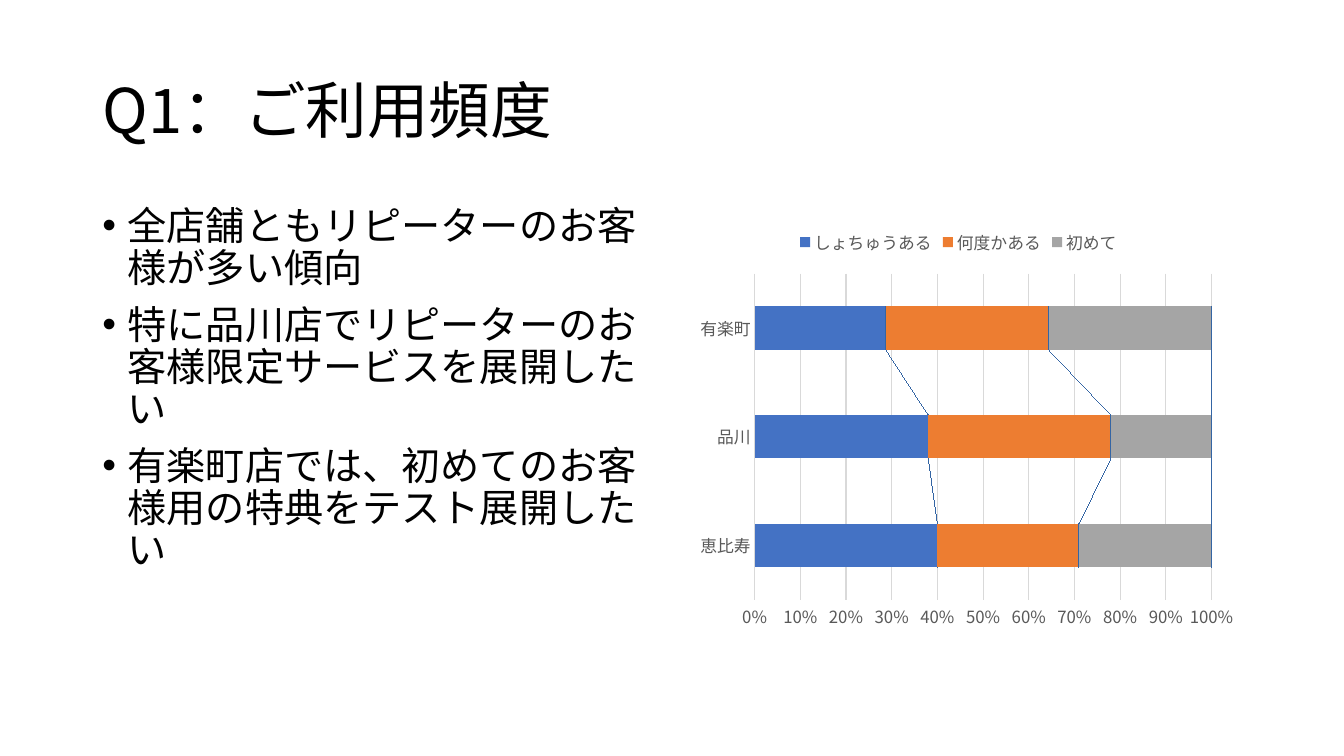
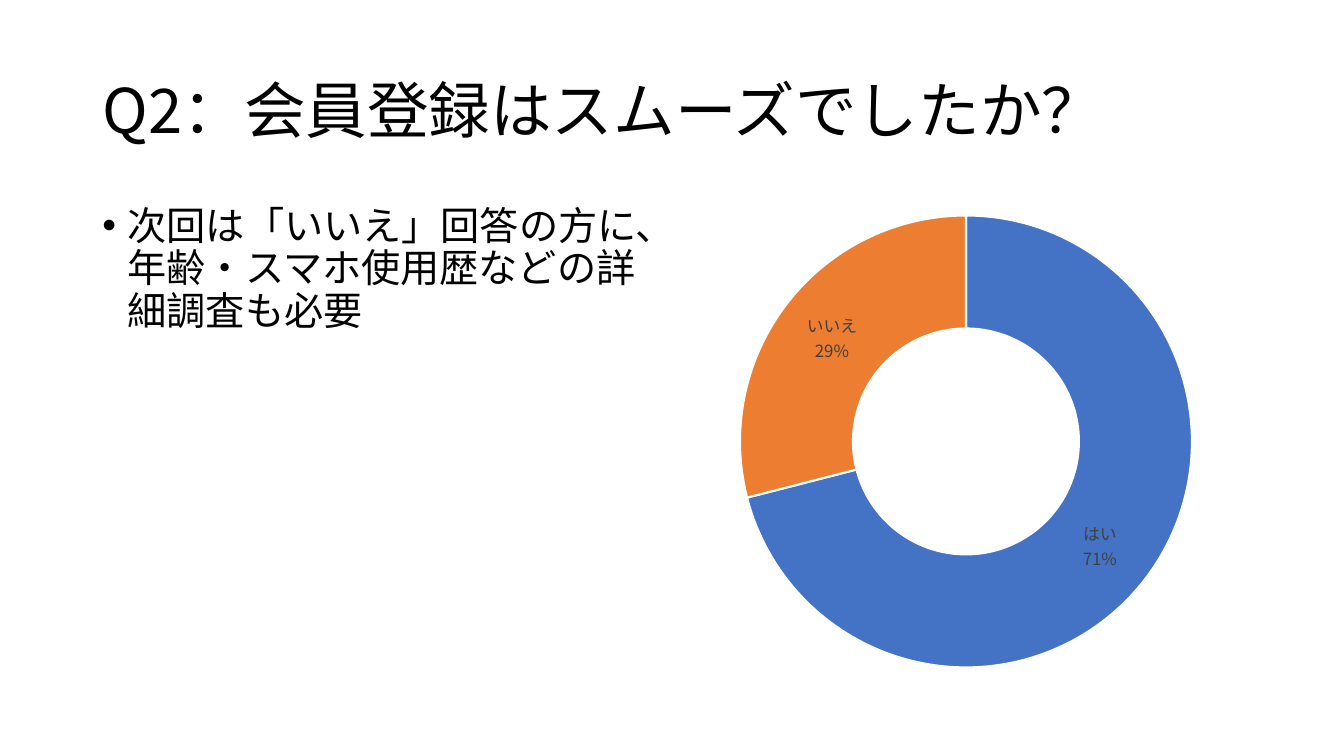
from lxml.etree import SubElement
from pptx import Presentation
from pptx.chart.data import CategoryChartData
from pptx.dml.color import RGBColor
from pptx.enum.chart import XL_CHART_TYPE, XL_LEGEND_POSITION, XL_TICK_MARK
from pptx.enum.text import MSO_ANCHOR, MSO_AUTO_SIZE
from pptx.oxml.ns import qn
from pptx.util import Pt

FONT = "Noto Sans CJK JP"
BLACK = RGBColor(0x00, 0x00, 0x00)
WHITE = RGBColor(0xFF, 0xFF, 0xFF)
AXIS_TEXT = RGBColor(0x59, 0x59, 0x59)
LABEL_TEXT = RGBColor(0x40, 0x40, 0x40)
GRID = RGBColor(0xD9, 0xD9, 0xD9)
PALETTE = (
    RGBColor(0x44, 0x72, 0xC4),
    RGBColor(0xED, 0x7D, 0x31),
    RGBColor(0xA5, 0xA5, 0xA5),
)
TITLE_BOX = (Pt(66), Pt(28.8), Pt(828), Pt(104.4))
BODY_BOX = (Pt(66), Pt(144), Pt(408), Pt(342.7))
CHART_BOX = (Pt(486), Pt(144), Pt(408), Pt(342.7))


def set_typeface(properties):
    """Use the deck font for Latin and East Asian text."""
    for tag in ("a:latin", "a:ea"):
        for old in properties.findall(qn(tag)):
            properties.remove(old)
    for tag in ("a:latin", "a:ea"):
        SubElement(properties, qn(tag), typeface=FONT)


def style_master_text(deck, style_name, size, indent, space_before):
    """Define the first-level text style on the slide master."""
    style = deck.slide_master.element.find(f".//{qn(style_name)}/{qn('a:lvl1pPr')}")
    style.set("algn", "l")
    style.set("marL", str(indent))
    style.set("indent", str(-indent))
    before = style.find(qn("a:spcBef"))
    before.clear()
    SubElement(before, qn("a:spcPts"), val=str(space_before * 100))
    line_spacing = SubElement(style, qn("a:lnSpc"))
    SubElement(line_spacing, qn("a:spcPct"), val="90000")
    style.insert(0, line_spacing)
    properties = style.find(qn("a:defRPr"))
    properties.set("sz", str(size * 100))
    for tag in ("a:cs", "a:sym"):
        for old in properties.findall(qn(tag)):
            properties.remove(old)
    set_typeface(properties)


def prepare_layout(deck):
    """Place the shared title and body boxes and return their layout."""
    style_master_text(deck, "p:titleStyle", 44, 0, 0)
    style_master_text(deck, "p:bodyStyle", 28, Pt(18), 10)
    layout = deck.slide_layouts[1]
    anchors = (MSO_ANCHOR.MIDDLE, MSO_ANCHOR.TOP)
    for holder, box, anchor in zip(layout.placeholders, (TITLE_BOX, BODY_BOX), anchors):
        holder.left, holder.top, holder.width, holder.height = box
        holder.text_frame.auto_size = MSO_AUTO_SIZE.NONE
        holder.text_frame.vertical_anchor = anchor
    return layout


def add_page(deck, layout, title, points):
    """Add a page with a title and a bulleted list."""
    page = deck.slides.add_slide(layout)
    page.shapes.title.text = title
    page.placeholders[1].text = "\n".join(points)
    return page


def add_chart(page, kind, categories, series):
    """Add a chart in the right column with the deck font."""
    data = CategoryChartData()
    data.categories = categories
    for name, values in series:
        data.add_series(name, values)
    chart = page.shapes.add_chart(kind, *CHART_BOX, data).chart
    chart.has_title = False
    set_font(chart.font, 10, BLACK)
    return chart


def set_font(font, size, color):
    """Set the family, size and colour of a font."""
    font.name = FONT
    font.size = Pt(size)
    font.color.rgb = color


def paint(target, color):
    """Fill a series or a point with one colour."""
    target.format.fill.solid()
    target.format.fill.fore_color.rgb = color


def draw_line(line, color, width):
    """Set the colour and width of a line."""
    line.color.rgb = color
    line.width = Pt(width)


def place_part(part, index, **layout_values):
    """Give a chart part a manual layout at a child index."""
    for old in part.findall(qn("c:layout")):
        part.remove(old)
    layout = SubElement(part, qn("c:layout"))
    manual = SubElement(layout, qn("c:manualLayout"))
    for tag, value in layout_values.items():
        SubElement(manual, qn(f"c:{tag}"), val=str(value))
    part.insert(index, layout)


def apply_east_asian_font(chart):
    """Use the deck font for East Asian chart text."""
    for properties in chart.element.iter(qn("a:defRPr")):
        set_typeface(properties)


def add_share_bars(page, categories, series):
    """Add full-width stacked bars joined by series lines."""
    chart = add_chart(page, XL_CHART_TYPE.BAR_STACKED_100, categories, series)
    plot = chart.plots[0]
    plot.gap_width = 150
    plot.overlap = 100
    plot.vary_by_categories = False
    for bars, color in zip(plot.series, PALETTE):
        paint(bars, color)
    for axis in (chart.category_axis, chart.value_axis):
        axis.major_tick_mark = axis.minor_tick_mark = XL_TICK_MARK.NONE
        set_font(axis.tick_labels.font, 12, AXIS_TEXT)
    draw_line(chart.category_axis.format.line, GRID, 0.75)
    scale = chart.value_axis
    scale.maximum_scale, scale.major_unit = 1, 0.1
    scale.tick_labels.number_format = "0%"
    scale.tick_labels.number_format_is_linked = False
    scale.format.line.fill.background()
    draw_line(scale.major_gridlines.format.line, GRID, 0.75)
    chart.has_legend = True
    chart.legend.position = XL_LEGEND_POSITION.BOTTOM
    chart.legend.include_in_layout = False
    set_font(chart.legend.font, 12, AXIS_TEXT)
    root = chart.element
    place_part(root.find(f".//{qn('c:legend')}"), 1,
               xMode="edge", yMode="edge", x=0.2, y=0.05)
    plot_area = root.find(f".//{qn('c:plotArea')}")
    place_part(plot_area, 0, layoutTarget="inner", xMode="edge", yMode="edge",
               x=0.13, y=0.15, w=0.8, h=0.68)
    bar_chart = plot_area.find(qn("c:barChart"))
    bar_chart.find(qn("c:overlap")).addnext(SubElement(bar_chart, qn("c:serLines")))
    apply_east_asian_font(chart)


def add_answer_ring(page, categories, values):
    """Add a doughnut labelled with answers and percentages."""
    chart = add_chart(page, XL_CHART_TYPE.DOUGHNUT, categories, [("Series 1", values)])
    chart.has_legend = False
    plot = chart.plots[0]
    for index, color in enumerate(PALETTE[:len(values)]):
        point = plot.series[0].points[index]
        paint(point, color)
        draw_line(point.format.line, WHITE, 1.5)
    plot.has_data_labels = True
    labels = plot.data_labels
    labels.show_category_name = labels.show_percentage = True
    labels.show_value = False
    labels.number_format = "0%"
    labels.number_format_is_linked = False
    set_font(labels.font, 12, LABEL_TEXT)
    label_part = chart.element.find(f".//{qn('c:dLbls')}")
    separator = SubElement(label_part, qn("c:separator"))
    separator.text = "\n"
    label_part.find(qn("c:showBubbleSize")).addnext(separator)
    chart.element.find(f".//{qn('c:holeSize')}").set("val", "50")
    apply_east_asian_font(chart)


def main():
    """Build and save the survey deck."""
    deck = Presentation()
    deck.slide_width, deck.slide_height = Pt(960), Pt(540)
    layout = prepare_layout(deck)

    page = add_page(deck, layout, "Q1：ご利用頻度", [
        "全店舗ともリピーターのお客様が多い傾向",
        "特に品川店でリピーターのお客様限定サービスを展開したい",
        "有楽町店では、初めてのお客様用の特典をテスト展開したい",
    ])
    add_share_bars(page, ["恵比寿", "品川", "有楽町"], [
        ("しょちゅうある", (40, 38, 29)),
        ("何度かある", (31, 40, 36)),
        ("初めて", (29, 22, 36)),
    ])

    page = add_page(deck, layout, "Q2：会員登録はスムーズでしたか？", [
        "次回は「いいえ」回答の方に、年齢・スマホ使用歴などの詳細調査も必要",
    ])
    add_answer_ring(page, ["はい", "いいえ"], (71, 29))
    deck.save("out.pptx")


if __name__ == "__main__":
    main()
